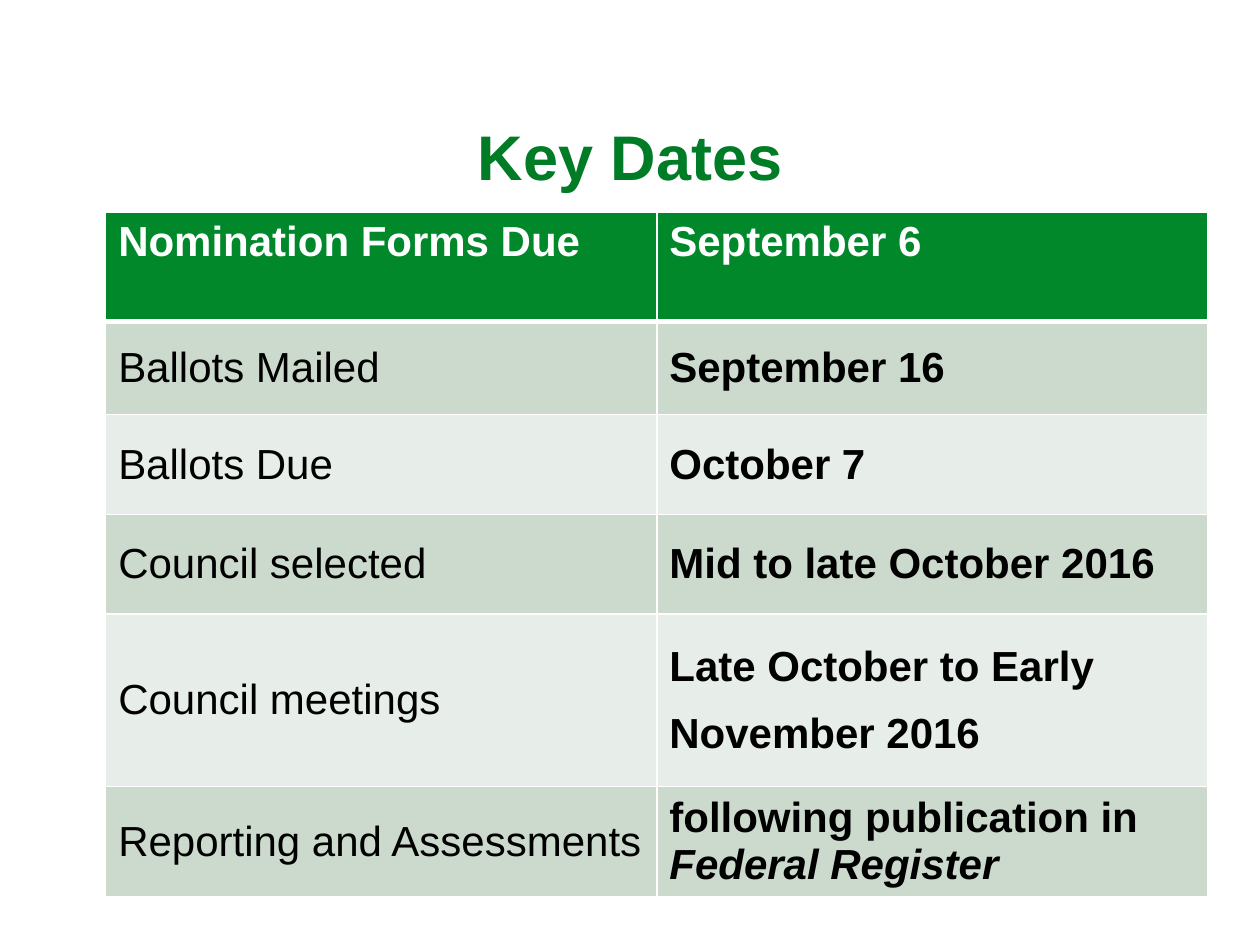
"""Build the Key Dates slide: a title above a two-column schedule table."""
from lxml import etree
from pptx import Presentation
from pptx import util as u
from pptx.dml.color import RGBColor
from pptx.enum import text
from pptx.oxml import ns

TITLE = "Key Dates"
FONT = "Arial"
GREEN, WHITE, BLACK = "00882B", "FFFFFF", "000000"
BANDS = ["CCDACD", "E7EDE8"]
COL_W = 11.11
ROWS = [
    (2.21, "Nomination Forms Due", ["September 6"]),
    (1.88, "Ballots Mailed", ["September 16"]),
    (2.01, "Ballots Due", ["October 7"]),
    (2.01, "Council selected", ["Mid to late October 2016"]),
    (3.48, "Council meetings", ["Late October to Early", "November 2016"]),
    (2.21, "Reporting and Assessments", ["following publication in "]),
]
JOURNAL = "Federal Register"


def rgb(color):
    return RGBColor.from_string(color)


def style(p, size, color, bold):
    p.font.name, p.font.size, p.font.bold = FONT, u.Pt(size), bold
    p.font.color.rgb = rgb(color)


def border(cell, **widths):
    tcPr = cell._tc.get_or_add_tcPr()
    for side, width in widths.items():
        ln = etree.SubElement(tcPr, ns.qn(f"a:ln{side}"), w=str(u.Pt(width)))
        fill = etree.SubElement(ln, ns.qn("a:solidFill"))
        etree.SubElement(fill, ns.qn("a:srgbClr"), val=WHITE)


def fill_cell(cell, lines, row, bold):
    header = row == 0
    border(cell, L=1, R=1, T=3 if row == 1 else 1, B=3 if header else 1)
    cell.fill.solid()
    cell.fill.fore_color.rgb = rgb(GREEN if header else BANDS[(row - 1) % 2])
    cell.vertical_anchor = text.MSO_ANCHOR.TOP if header else text.MSO_ANCHOR.MIDDLE
    tf = cell.text_frame
    for i, line in enumerate(lines):
        p = tf.add_paragraph() if i else tf.paragraphs[0]
        p.add_run().text = line
        style(p, 24, WHITE if header else BLACK, bold)
        if i:
            p.space_before = u.Pt(12)


def add_title(s):
    sp = s.shapes.title
    sp.left, sp.top, sp.width, sp.height = u.Cm(1.27), u.Cm(2.34), u.Cm(22.86), u.Cm(1.6)
    tf = sp.text_frame
    tf.text = TITLE
    tf.margin_left = tf.margin_right = u.Cm(0.18)
    tf.margin_top = tf.margin_bottom = u.Cm(0.1)
    tf.vertical_anchor = text.MSO_ANCHOR.MIDDLE
    p = tf.paragraphs[0]
    p.alignment = text.PP_ALIGN.CENTER
    style(p, 36, "007B26", True)


def add_dates(s):
    height = sum(row[0] for row in ROWS)
    table = s.shapes.add_table(len(ROWS), 2, u.Cm(2.13), u.Cm(4.27),
                               u.Cm(2 * COL_W), u.Cm(height)).table
    for column in table.columns:
        column.width = u.Cm(COL_W)
    for i, (row_h, event, dates) in enumerate(ROWS):
        table.rows[i].height = u.Cm(row_h)
        fill_cell(table.cell(i, 0), [event], i, i == 0)
        fill_cell(table.cell(i, 1), dates, i, True)
    r = table.cell(len(ROWS) - 1, 1).text_frame.paragraphs[0].add_run()
    r.text = JOURNAL
    r.font.italic = True
    r.font.bold = True
    r.font.size = u.Pt(24)
    r.font.name = FONT


def main():
    prs = Presentation()
    prs.slide_width, prs.slide_height = u.Cm(25.4), u.Cm(19.05)
    s = prs.slides.add_slide(prs.slide_layouts[5])
    add_title(s)
    add_dates(s)
    prs.save("out.pptx")


if __name__ == "__main__":
    main()
